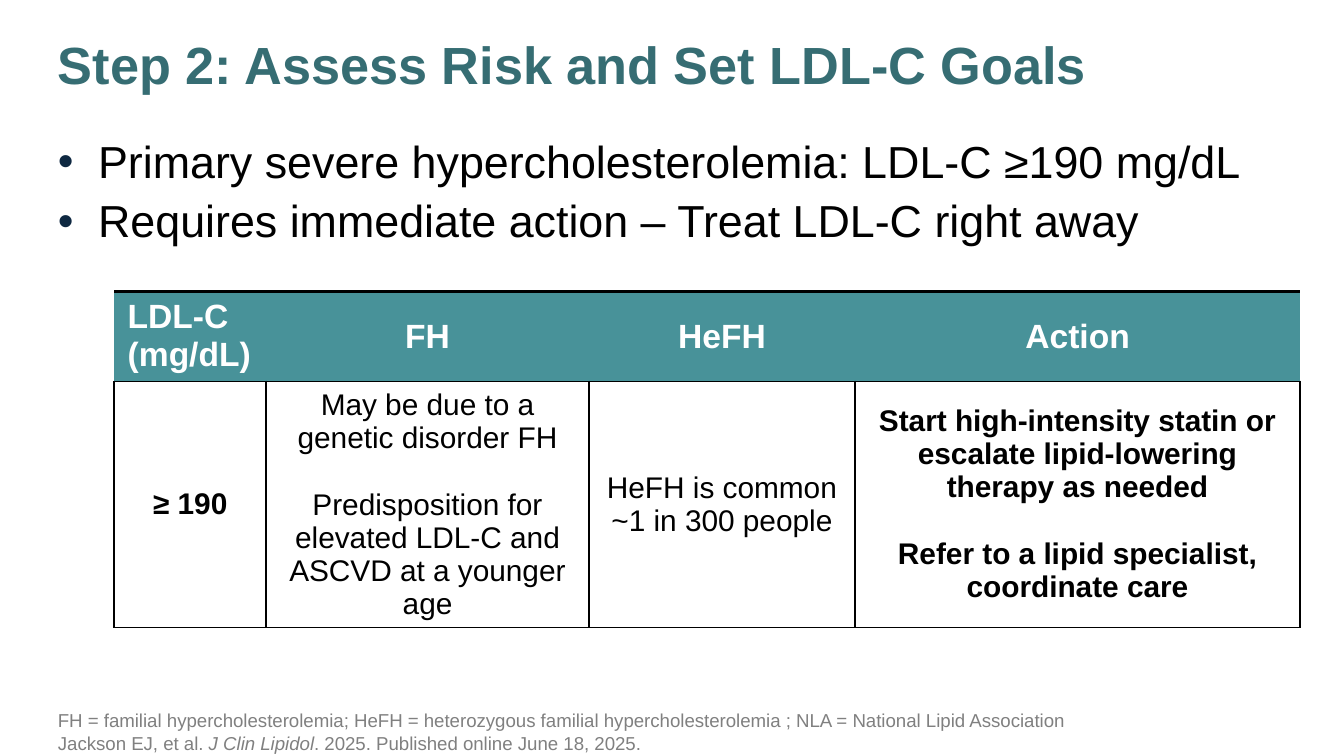
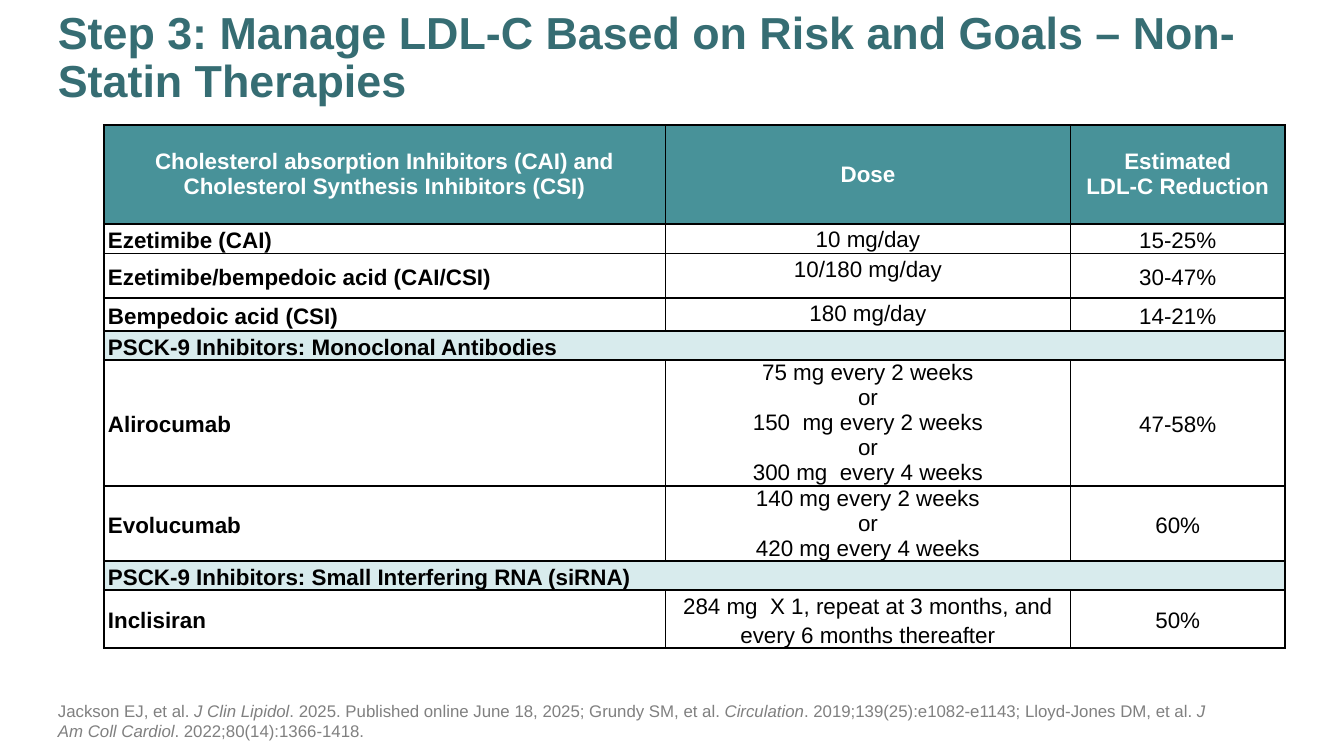
from dataclasses import dataclass

from lxml.etree import SubElement
from pptx import Presentation
from pptx.dml.color import RGBColor
from pptx.enum.text import MSO_ANCHOR as Anchor, MSO_AUTO_SIZE as AutoSize, PP_ALIGN as Align
from pptx.oxml.ns import qn
from pptx.util import Cm, Pt


@dataclass(frozen=True)
class Theme:
    font: str = "Arial"
    title: str = "366D73"
    header: str = "489299"
    section: str = "D8EBED"
    bullet: str = "0E2841"
    note: str = "808080"
    black: str = "000000"
    white: str = "FFFFFF"
    list_size: int = 24
    goal_header_size: int = 18
    goal_size: int = 16
    therapy_size: int = 12
    plain_table_style: str = "{2D5ABB26-0587-4C30-8999-92F81FD0307C}"


theme = Theme()


def write(text_frame, text, size, colour, bold=False, align=Align.LEFT,
          line_spacing=1.0, after=0, bullet=None):
    """Write one paragraph per line of text; words between asterisks are italic."""
    text_frame.word_wrap = True
    for number, line in enumerate(text.split("\n")):
        paragraph = text_frame.paragraphs[0] if number == 0 else text_frame.add_paragraph()
        properties = paragraph._p.get_or_add_pPr()
        if bullet:
            properties.set("marL", str(Cm(0.76)))
            properties.set("indent", str(-Cm(0.76)))
            colour_element = SubElement(properties, qn("a:buClr"))
            SubElement(colour_element, qn("a:srgbClr"), val=theme.bullet)
            SubElement(properties, qn("a:buFont"), typeface=theme.font)
            SubElement(properties, qn("a:buChar"), char=bullet)
        else:
            properties.set("marL", "0")
            properties.set("indent", "0")
            SubElement(properties, qn("a:buNone"))
        paragraph.alignment = align
        paragraph.line_spacing = line_spacing
        paragraph.space_before = Pt(0)
        paragraph.space_after = Pt(after)
        for part, words in enumerate(line.split("*")):
            run = paragraph.add_run()
            run.text = words
            run.font.name = theme.font
            run.font.size = Pt(size)
            run.font.bold = bold
            run.font.italic = part % 2 == 1
            run.font.color.rgb = RGBColor.from_string(colour)


def paint_cell(cell, fill, borders):
    """Fill a cell and draw its borders, given as {side: points} with sides L, R, T and B."""
    properties = cell._tc.get_or_add_tcPr()
    for side in "LRTB":
        if side in borders:
            line = SubElement(properties, qn(f"a:ln{side}"), w=str(Pt(borders[side])))
            solid = SubElement(line, qn("a:solidFill"))
            SubElement(solid, qn("a:srgbClr"), val=theme.black)
    cell.fill.solid()
    cell.fill.fore_color.rgb = RGBColor.from_string(fill)


goal_rows = [
    ["LDL-C  (mg/dL)", "FH", "HeFH", "Action"],
    ["≥ 190",
     "May be due to a genetic disorder FH\n"
     "Predisposition for elevated LDL-C and ASCVD at a younger age",
     "HeFH is common\n~1 in 300 people",
     "Start high-intensity statin or escalate lipid-lowering therapy as needed\n"
     "Refer to a lipid specialist, coordinate care"],
]
therapy_rows = [
    ["Cholesterol absorption Inhibitors (CAI) and Cholesterol Synthesis Inhibitors (CSI)",
     "Dose", "Estimated\nLDL-C Reduction"],
    ["Ezetimibe (CAI)", "10 mg/day", "15-25%"],
    ["Ezetimibe/bempedoic acid (CAI/CSI)", "10/180 mg/day", "30-47%"],
    ["Bempedoic acid (CSI)", "180 mg/day", "14-21%"],
    ["PSCK-9 Inhibitors: Monoclonal Antibodies"],
    ["Alirocumab",
     "75 mg every 2 weeks\nor\n150  mg every 2 weeks\nor\n300 mg  every 4 weeks", "47-58%"],
    ["Evolucumab", "140 mg every 2 weeks\nor\n420 mg every 4 weeks", "60%"],
    ["PSCK-9 Inhibitors: Small Interfering RNA (siRNA)"],
    ["Inclisiran", "284 mg  X 1, repeat at 3 months, and every 6 months thereafter", "50%"],
]
pages = [
    dict(layout="Two Content",
         title="Step 2: Assess Risk and Set LDL-C Goals", title_top=0.03, title_size=28,
         note="FH = familial hypercholesterolemia; HeFH = heterozygous familial "
              "hypercholesterolemia ; NLA = National Lipid Association\n"
              "Jackson EJ, et al. *J Clin Lipidol*. 2025. Published online June 18, 2025.",
         note_top=13.41, note_size=10, table_at=(2.16, 5.51),
         widths=[2.87, 6.1, 5.03, 8.41], heights=[1.7, 4.65]),
    dict(layout="Title and Content",
         title="Step 3: Manage LDL-C Based on Risk and Goals – Non-Statin Therapies",
         title_top=-0.13, title_size=24,
         note="Jackson EJ, et al. *J Clin Lipidol*. 2025. Published online June 18, 2025; "
              "Grundy SM, et al. *Circulation*. 2019;139(25):e1082-e1143; "
              "Lloyd-Jones DM, et al. *J Am Coll Cardiol*. 2022;80(14):1366-1418.",
         note_top=13.21, note_size=9, table_at=(1.96, 2.36),
         widths=[10.62, 7.65, 4.06],
         heights=[1.87, 0.56, 0.84, 0.63, 0.55, 2.37, 1.42, 0.55, 1.1]),
]

presentation = Presentation()
presentation.slide_width, presentation.slide_height = Cm(25.4), Cm(14.29)

# Titles, footnotes and empty tables
slides, tables = [], []
for page in pages:
    slide = presentation.slides.add_slide(presentation.slide_layouts.get_by_name(page["layout"]))
    note = list(slide.placeholders)[-1]
    for shape, top, width, height in (
            (slide.shapes.title, page["title_top"], 24.56, 2.49),
            (note, page["note_top"], 22.33, 0.84)):
        shape.left, shape.top = Cm(0.84), Cm(top)
        shape.width, shape.height = Cm(width), Cm(height)
        shape.text_frame.auto_size = AutoSize.NONE
        shape.text_frame.vertical_anchor = Anchor.MIDDLE
    write(slide.shapes.title.text_frame, page["title"], page["title_size"], theme.title,
          bold=True, line_spacing=0.9)
    write(note.text_frame, page["note"], page["note_size"], theme.note)

    widths, heights = page["widths"], page["heights"]
    left, top = page["table_at"]
    table = slide.shapes.add_table(len(heights), len(widths), Cm(left), Cm(top),
                                   Cm(sum(widths)), Cm(sum(heights))).table
    table._tbl.tblPr.find(qn("a:tableStyleId")).text = theme.plain_table_style
    table.horz_banding = False
    for column, width in zip(table.columns, widths):
        column.width = Cm(width)
    for row, height in zip(table.rows, heights):
        row.height = Cm(height)
    slides.append(slide)
    tables.append(table)

# Step 2: key points and goal table
key_points = slides[0].placeholders[1]
key_points.left, key_points.top = Cm(0.84), Cm(2.51)
key_points.width, key_points.height = Cm(23.98), Cm(10.69)
key_points.text_frame.auto_size = AutoSize.NONE
write(key_points.text_frame,
      "Primary severe hypercholesterolemia: LDL-C ≥190 mg/dL\n"
      "Requires immediate action – Treat LDL-C right away",
      theme.list_size, theme.black, line_spacing=0.9, after=6, bullet="•")

for row_number, row in enumerate(goal_rows):
    for column_number, text in enumerate(row):
        cell = tables[0].cell(row_number, column_number)
        is_header = row_number == 0
        is_corner = is_header and column_number == 0
        cell.vertical_anchor = Anchor.TOP if is_corner else Anchor.MIDDLE
        write(cell.text_frame, text,
              theme.goal_header_size if is_header else theme.goal_size,
              theme.white if is_header else theme.black,
              bold=is_header or column_number in (0, 3),
              align=Align.LEFT if is_corner else Align.CENTER)
        if not is_header and column_number in (1, 3):
            cell.text_frame.paragraphs[1].space_before = Pt(18)
        paint_cell(cell, theme.header if is_header else theme.white,
                   {"T": 2, "B": 1} if is_header else dict.fromkeys("LRTB", 1))

# Step 3: therapy table
for row_number, row in enumerate(therapy_rows):
    is_header, is_section = row_number == 0, len(row) == 1
    fill = theme.header if is_header else theme.section if is_section else theme.white
    for column_number in range(3):
        cell = tables[1].cell(row_number, column_number)
        cell.margin_left = cell.margin_right = Cm(0.08)
        cell.margin_top = cell.margin_bottom = 0
        paint_cell(cell, fill, dict.fromkeys("LRTB", 1))
    if is_section:
        tables[1].cell(row_number, 0).merge(tables[1].cell(row_number, 2))
    for column_number, text in enumerate(row):
        cell = tables[1].cell(row_number, column_number)
        is_name = column_number == 0
        is_dose = column_number == 1 and not is_header
        is_tight = is_header or "\n" in text
        cell.vertical_anchor = Anchor.TOP if is_dose else Anchor.MIDDLE
        write(cell.text_frame, text, theme.therapy_size,
              theme.white if is_header else theme.black, bold=is_header or is_name,
              align=Align.LEFT if is_name and not is_header else Align.CENTER,
              line_spacing=1.0 if is_tight else 1.15, after=0 if is_tight else 8)

presentation.save("out.pptx")
